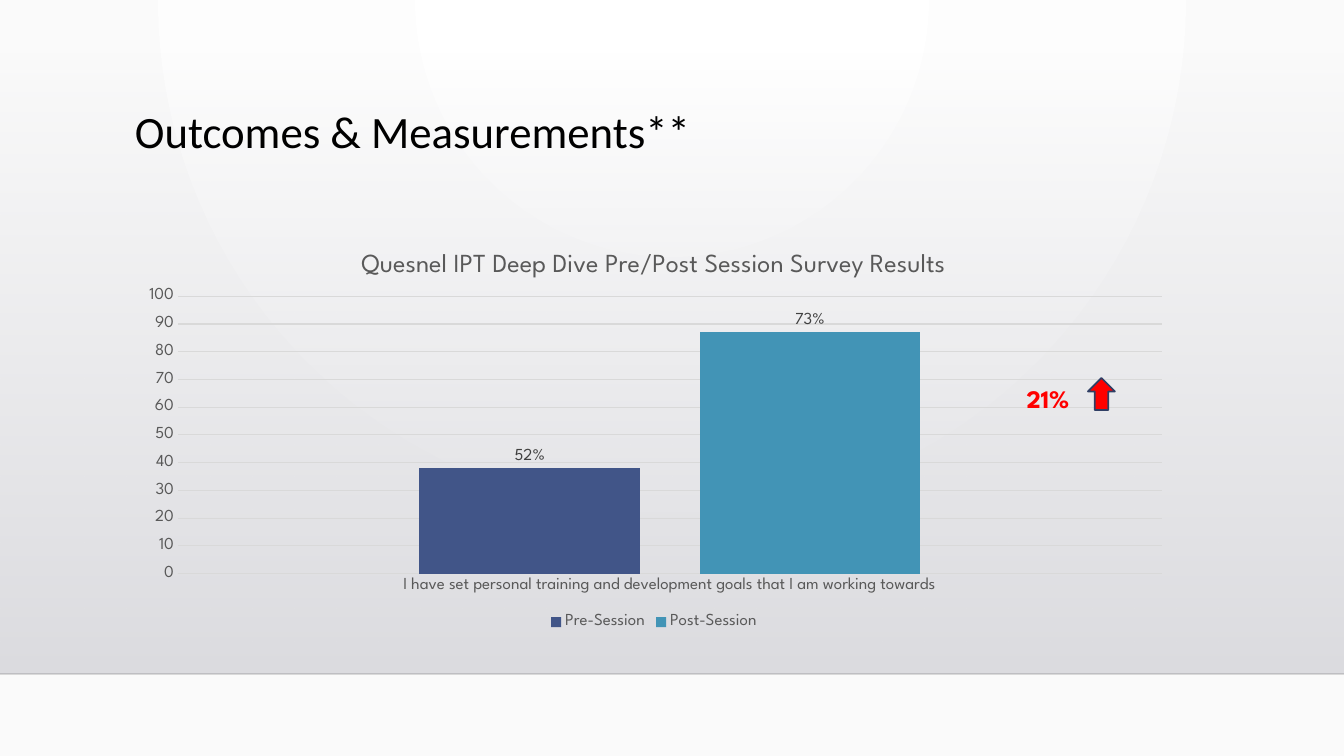
from dataclasses import dataclass

from lxml import etree
from pptx import Presentation
from pptx import util as u
from pptx.chart.data import CategoryChartData
from pptx.dml.color import RGBColor
from pptx.enum import chart as ch, shapes, text
from pptx.oxml import parse_xml
from pptx.oxml.ns import nsdecls, qn

EMU_PER_PX = 914400 / 100.8


@dataclass(frozen=True)
class Theme:
    title_font: str = "Calibri"
    body_font: str = "League Spartan"
    title_size: float = 32
    chart_title_size: float = 18.6
    change_size: float = 18
    label_size: float = 12
    ink: str = "000000"
    axis_text: str = "595959"
    label_text: str = "404040"
    grid: str = "D9D9D9"
    pre: str = "415588"
    post: str = "4294B6"
    change: str = "FF0000"
    arrow_line: str = "303F65"
    back_inner: str = "FFFFFF"
    back_outer: str = "FAFAFA"
    panel_top: str = "DCDCE0"
    panel_bottom: str = "DEDEE2"
    floor_line: str = "000001"


THEME = Theme()
CATEGORY = "I have set personal training and development goals that I am working towards"
SERIES = [("Pre-Session", 38, "52%", THEME.pre), ("Post-Session", 87, "73%", THEME.post)]


def px(n):
    return u.Emu(round(n * EMU_PER_PX))


def box(*lengths):
    return [px(n) for n in lengths]


def rgb(value):
    return RGBColor.from_string(value)


def style(font, name, size, color, bold=False):
    font.name, font.size, font.bold = name, u.Pt(size), bold
    font.color.rgb = rgb(color)


def gradient(first, last, direction, first_alpha=100):
    """Return a two-stop gradFill element; direction is its lin or path XML."""
    return parse_xml(
        f'<a:gradFill {nsdecls("a")} rotWithShape="1"><a:gsLst>'
        f'<a:gs pos="0"><a:srgbClr val="{first}"><a:alpha val="{first_alpha * 1000}"/></a:srgbClr></a:gs>'
        f'<a:gs pos="100000"><a:srgbClr val="{last}"/></a:gs>'
        f'</a:gsLst>{direction}</a:gradFill>')


def set_background(slide):
    fill = slide.background.fill
    fill.solid()
    solid = slide._element.cSld.bg.bgPr.find(qn("a:solidFill"))
    path = ('<a:path path="circle">'
            '<a:fillToRect l="43000" t="0" r="43000" b="100000"/></a:path>')
    solid.getparent().replace(solid, gradient(THEME.back_inner, THEME.back_outer, path))


def add_panel(slide):
    sp = slide.shapes.add_shape(shapes.MSO_SHAPE.RECTANGLE, *box(0, 51, 1344, 623))
    sp.shadow.inherit = False
    sp.line.fill.background()
    sp.fill.solid()
    solid = sp._element.spPr.find(qn("a:solidFill"))
    lin = '<a:lin ang="5400000" scaled="0"/>'
    solid.getparent().replace(solid, gradient(THEME.panel_top, THEME.panel_bottom, lin, 0))


def add_floor_line(slide):
    line = slide.shapes.add_connector(shapes.MSO_CONNECTOR.STRAIGHT, *box(0, 674, 1344, 674))
    line.line.color.rgb = rgb(THEME.floor_line)
    line.line.width = u.Pt(1)
    spPr = line._element.spPr
    color = next(spPr.iter(qn("a:srgbClr")))
    etree.SubElement(color, qn("a:alpha")).set("val", "20000")
    etree.SubElement(spPr, qn("a:effectLst"))


def add_text(slide, place, words, font, size, color, bold=False,
             align=text.PP_ALIGN.LEFT, spacing=1.0):
    tf = slide.shapes.add_textbox(*box(*place)).text_frame
    tf.word_wrap = True
    p = tf.paragraphs[0]
    p.text, p.alignment, p.line_spacing = words, align, spacing
    style(p.runs[0].font, font, size, color, bold)


def add_up_arrow(slide, place):
    sp = slide.shapes.add_shape(shapes.MSO_SHAPE.UP_ARROW, *box(*place))
    sp.shadow.inherit = False
    sp.fill.solid()
    sp.fill.fore_color.rgb = rgb(THEME.change)
    sp.line.color.rgb = rgb(THEME.arrow_line)
    sp.line.width = u.Pt(1.25)


def place_plot(chart, **fractions):
    """Fix the inner plot area as fractions of the chart frame."""
    area = chart._chartSpace.chart.plotArea
    for old in area.findall(qn("c:layout")):
        area.remove(old)
    parts = "".join(f'<c:{k} val="{v}"/>' for k, v in fractions.items())
    area.insert(0, parse_xml(
        f'<c:layout {nsdecls("c")}><c:manualLayout><c:layoutTarget val="inner"/>'
        f'<c:xMode val="edge"/><c:yMode val="edge"/>{parts}</c:manualLayout></c:layout>'))


def style_axes(chart):
    cat, val = chart.category_axis, chart.value_axis
    for axis in (cat, val):
        axis.major_tick_mark = axis.minor_tick_mark = ch.XL_TICK_MARK.NONE
        style(axis.tick_labels.font, THEME.body_font, THEME.label_size, THEME.axis_text)
    val.minimum_scale, val.maximum_scale, val.major_unit = 0, 100, 10
    val.format.line.fill.background()
    for line in (cat.format.line, val.major_gridlines.format.line):
        line.color.rgb = rgb(THEME.grid)
        line.width = u.Pt(0.75)


def style_series(series, label, color):
    series.format.fill.solid()
    series.format.fill.fore_color.rgb = rgb(color)
    labels = series.data_labels
    labels.show_value = True
    labels.position = ch.XL_LABEL_POSITION.OUTSIDE_END
    style(labels.font, THEME.body_font, THEME.label_size, THEME.label_text)
    point = series.points[0].data_label
    point.text_frame.text = label
    point.position = ch.XL_LABEL_POSITION.OUTSIDE_END
    style(point.text_frame.paragraphs[0].runs[0].font,
          THEME.body_font, THEME.label_size, THEME.label_text)


def add_survey_chart(slide, place):
    data = CategoryChartData()
    data.categories = [CATEGORY]
    for name, value, _, _ in SERIES:
        data.add_series(name, [value])
    chart = slide.shapes.add_chart(
        ch.XL_CHART_TYPE.COLUMN_CLUSTERED, *box(*place), data).chart
    style(chart.font, THEME.body_font, 10, THEME.ink)
    tf = chart.chart_title.text_frame
    tf.text = "Quesnel IPT Deep Dive Pre/Post Session Survey Results"
    style(tf.paragraphs[0].runs[0].font,
          THEME.body_font, THEME.chart_title_size, THEME.axis_text)
    chart.chart_title.include_in_layout = False
    chart.has_legend = True
    chart.legend.position = ch.XL_LEGEND_POSITION.BOTTOM
    chart.legend.include_in_layout = False
    style(chart.legend.font, THEME.body_font, THEME.label_size, THEME.axis_text)
    plot = chart.plots[0]
    plot.gap_width, plot.overlap, plot.vary_by_categories = 219, -27, False
    style_axes(chart)
    for series, (_, _, label, color) in zip(plot.series, SERIES):
        style_series(series, label, color)
    place_plot(chart, x=0.05, y=0.16, w=0.93, h=0.69)


def main():
    prs = Presentation()
    prs.slide_width, prs.slide_height = box(1344, 756)
    slide = prs.slides.add_slide(prs.slide_layouts[6])
    set_background(slide)
    add_panel(slide)
    add_floor_line(slide)
    add_text(slide, (125, 105, 1058, 116), "Outcomes & Measurements**",
             THEME.title_font, THEME.title_size, THEME.ink, spacing=0.9)
    add_survey_chart(slide, (125, 232, 1058, 402))
    add_text(slide, (972, 378, 152, 40), "21%", THEME.body_font, THEME.change_size,
             THEME.change, bold=True, align=text.PP_ALIGN.CENTER)
    add_up_arrow(slide, (1088, 378, 27, 32))
    prs.save("out.pptx")


if __name__ == "__main__":
    main()
